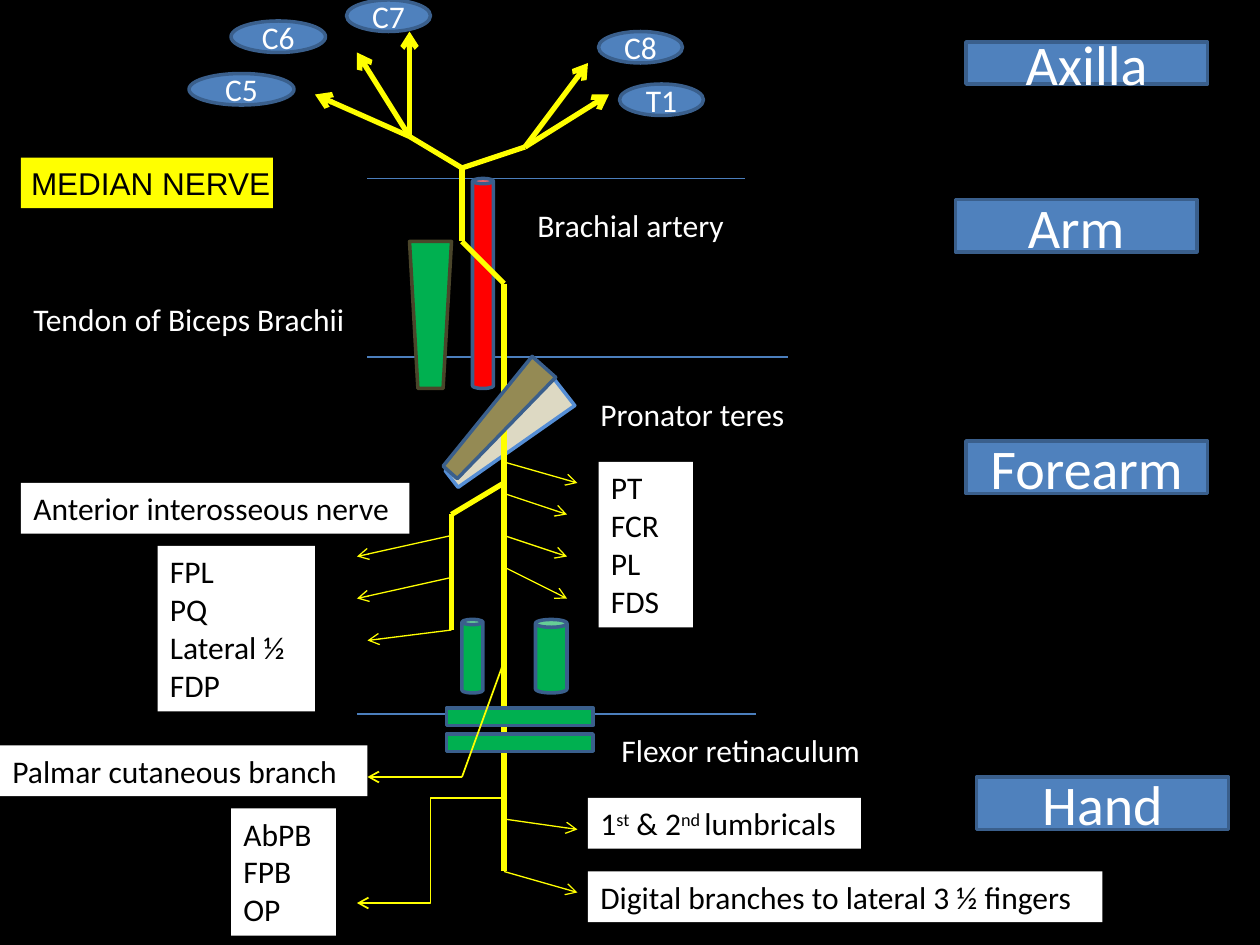
from dataclasses import dataclass
from itertools import pairwise

import pptx
import pptx.dml.color
import pptx.enum.shapes
import pptx.enum.text
import pptx.util
from lxml import etree
from pptx.oxml.ns import qn

SHAPE = pptx.enum.shapes.MSO_SHAPE
LINK = pptx.enum.shapes.MSO_CONNECTOR
ALIGN = pptx.enum.text.PP_ALIGN
ANCHOR = pptx.enum.text.MSO_ANCHOR


@dataclass(frozen=True)
class Theme:
    background: str = "000000"
    light: str = "FFFFFF"
    dark: str = "000000"
    nerve: str = "FFFF00"
    box: str = "4F81BD"
    edge: str = "3A5F8C"
    boundary: str = "4B7EBC"
    artery: str = "FF0000"
    tendon: str = "00B050"
    tendon_edge: str = "4A452A"
    superficial: str = "948A54"
    deep: str = "DDD9C3"
    deep_edge: str = "558ED5"
    font: str = "Calibri"
    title_font: str = "Arial"
    body_size: int = 18
    region_size: int = 32
    thick: float = 3
    medium: float = 1
    thin: float = 0.75
    outline: float = 2


T = Theme()
COLS, ROWS = 120, 90  # grid over the whole slide
WIDTH, HEIGHT = pptx.util.Inches(10), pptx.util.Inches(7.5)


@dataclass(frozen=True)
class Solid:
    kind: int
    box: tuple[float, float, float, float]
    fill: str
    edge: str = T.edge
    rotation: float = 0
    text: str = ""
    size: int = T.body_size


@dataclass(frozen=True)
class Route:
    points: tuple[tuple[float, float], ...]
    weight: float = T.thick
    arrow: bool = False
    color: str = T.nerve
    kind: int = LINK.STRAIGHT


@dataclass(frozen=True)
class Label:
    """Paragraphs are lists of runs; a run starting with ^ is raised."""
    col: float
    row: float
    cols: float
    paragraphs: list[list[str]]
    lines: int = 1
    fill: str | None = T.light


def x(cols: float) -> int:
    return round(WIDTH * cols / COLS)


def y(rows: float) -> int:
    return round(HEIGHT * rows / ROWS)


def rgb(color: str) -> pptx.dml.color.RGBColor:
    return pptx.dml.color.RGBColor.from_string(color)


def text_rows(lines: int) -> float:
    return 1.2 + 3.64 * lines


def paint(s, color: str) -> None:
    s.fill.solid()
    s.fill.fore_color.rgb = rgb(color)


def add_run(p, text: str, color: str, size: int = T.body_size, font: str = T.font) -> None:
    r = p.add_run()
    r.text = text.removeprefix("^")
    r.font.size, r.font.name = pptx.util.Pt(size), font
    r.font.color.rgb = rgb(color)
    if text.startswith("^"):
        r.font._element.set("baseline", "30000")


def draw_solid(slide, item: Solid) -> None:
    col, row, cols, rows = item.box
    s = slide.shapes.add_shape(item.kind, x(col), y(row), x(cols), y(rows))
    s.shadow.inherit = False
    s.rotation = item.rotation
    paint(s, item.fill)
    s.line.color.rgb = rgb(item.edge)
    s.line.width = pptx.util.Pt(T.outline)
    if item.text:
        tf = s.text_frame
        tf.vertical_anchor = ANCHOR.MIDDLE
        p = tf.paragraphs[0]
        p.alignment = ALIGN.CENTER
        add_run(p, item.text, T.light, item.size)


def draw_route(slide, item: Route) -> None:
    for (c1, r1), (c2, r2) in pairwise(item.points):
        s = slide.shapes.add_connector(item.kind, x(c1), y(r1), x(c2), y(r2))
        s.line.color.rgb = rgb(item.color)
        s.line.width = pptx.util.Pt(item.weight)
        etree.SubElement(s._element.spPr, qn("a:effectLst"))
    if item.arrow:
        etree.SubElement(s.line._get_or_add_ln(), qn("a:tailEnd"), type="arrow")


def draw_label(slide, item: Label) -> None:
    s = slide.shapes.add_textbox(x(item.col), y(item.row), x(item.cols), y(text_rows(item.lines)))
    if item.fill:
        paint(s, item.fill)
    tf = s.text_frame
    tf.word_wrap = True
    for i, runs in enumerate(item.paragraphs):
        p = tf.add_paragraph() if i else tf.paragraphs[0]
        for text in runs:
            add_run(p, text, T.dark if item.fill else T.light)


def draw_title(slide, text: str) -> None:
    s = slide.shapes.title
    s.left, s.top, s.width, s.height = x(2), y(15), x(24), y(text_rows(1))
    paint(s, T.nerve)
    tf = s.text_frame
    tf.auto_size = pptx.enum.text.MSO_AUTO_SIZE.NONE
    tf.vertical_anchor = ANCHOR.TOP
    tf.margin_left, tf.margin_right = pptx.util.Inches(0.08), 0  # keeps the title on one line
    p = tf.paragraphs[0]
    p.alignment = ALIGN.LEFT
    add_run(p, text, T.dark, font=T.title_font)


def branches(*ends: tuple, weight: float = T.thin) -> list[Route]:
    return [Route(pair, weight, arrow=True) for pair in ends]


MUSCLE = SHAPE.FLOWCHART_MANUAL_OPERATION
LATERAL, MEDIAL, JOIN = (39, 13), (50, 14), (44, 16)

ANATOMY = [
    Solid(MUSCLE, (46.68, 34.68, 3.36, 13.56), T.deep, T.deep_edge, 52.1),
    *[Route(((c1, row), (c2, row)), T.thin, color=T.boundary)
      for c1, c2, row in [(35, 75, 34), (34, 72, 68), (35, 71, 17)]],
    *branches((LATERAL, (34, 5)), (LATERAL, (39, 3)), (LATERAL, (30, 9)),
              (MEDIAL, (56, 6)), (MEDIAL, (58, 9)), weight=T.thick),
    Solid(SHAPE.CAN, (45, 17, 2, 20), T.artery),
    Route((LATERAL, JOIN, (44, 23), (48, 27), (48, 34), (48, 83))),
    Route((MEDIAL, JOIN)),
    Solid(MUSCLE, (39, 23, 4, 14), T.tendon, T.tendon_edge),
    Solid(MUSCLE, (45.84, 33.24, 3, 13.44), T.superficial, rotation=41.6),
    Route(((48, 46), (43, 49), (43, 60))),
    *branches(((43, 51), (34, 53)), ((43, 55), (34, 57)), ((43, 60), (35, 61)),
              ((48, 44), (55, 46)), ((48, 47), (54, 49)), ((48, 51), (54, 53)),
              ((48, 54), (54, 57))),
    Solid(SHAPE.CAN, (44, 59, 2, 7), T.tendon),
    Solid(SHAPE.CAN, (51, 59, 3, 7), T.tendon),
    Solid(SHAPE.MATH_EQUAL, (40, 66, 19, 7), T.tendon),
    Route(((48, 63), (44, 74), (35, 74)), T.medium, arrow=True),
    Route(((48, 76), (34, 86)), T.medium, arrow=True, kind=LINK.ELBOW),
    *branches(((48, 78), (55, 79)), ((48, 83), (55, 85))),
]
REGIONS = [
    Solid(SHAPE.RECTANGLE, box, T.box, text=text, size=T.region_size)
    for text, box in [("Axilla", (92, 4, 23, 4)), ("Arm", (91, 19, 23, 5)),
                      ("Forearm", (92, 42, 23, 5)), ("Hand", (93, 74, 24, 5))]
]
ROOTS = [
    Solid(SHAPE.OVAL, (col, row, cols, 3), T.box, text=text)
    for text, col, row, cols in [("C5", 18, 7, 10), ("C6", 22, 2, 9), ("C7", 33, 0, 8),
                                 ("C8", 57, 3, 8), ("T1", 59, 8, 8)]
]
LABELS = [
    Label(50, 19, 27, [["Brachial artery"]], fill=None),
    Label(2, 28, 36, [["Tendon of Biceps Brachii"]], fill=None),
    Label(56, 37, 25, [["Pronator teres"]], fill=None),
    Label(2, 46, 37, [["Anterior interosseous nerve"]]),
    Label(15, 52, 15, [["FPL"], ["PQ"], ["Lateral ½ FDP"]], lines=4),
    Label(57, 44, 9, [["PT"], ["FCR"], ["PL"], ["FDS"]], lines=4),
    Label(58, 69, 26, [["Flexor retinaculum"]], fill=None),
    Label(0, 71, 35, [["Palmar cutaneous branch"]]),
    Label(22, 77, 10, [["AbPB"], ["FPB"], ["OP"]], lines=3),
    Label(56, 76, 26, [["1", "^st", " & 2", "^nd ", "lumbricals"]]),
    Label(56, 83, 49, [["Digital branches to lateral 3 ½ fingers"]]),
]
DRAW = {Solid: draw_solid, Route: draw_route, Label: draw_label}


def main() -> None:
    prs = pptx.Presentation()
    prs.slide_width, prs.slide_height = WIDTH, HEIGHT
    slide = prs.slides.add_slide(prs.slide_layouts.get_by_name("Title Only"))
    paint(slide.background, T.background)
    draw_title(slide, "MEDIAN NERVE")
    for item in ANATOMY + REGIONS + ROOTS + LABELS:
        DRAW[type(item)](slide, item)
    prs.save("out.pptx")


if __name__ == "__main__":
    main()
